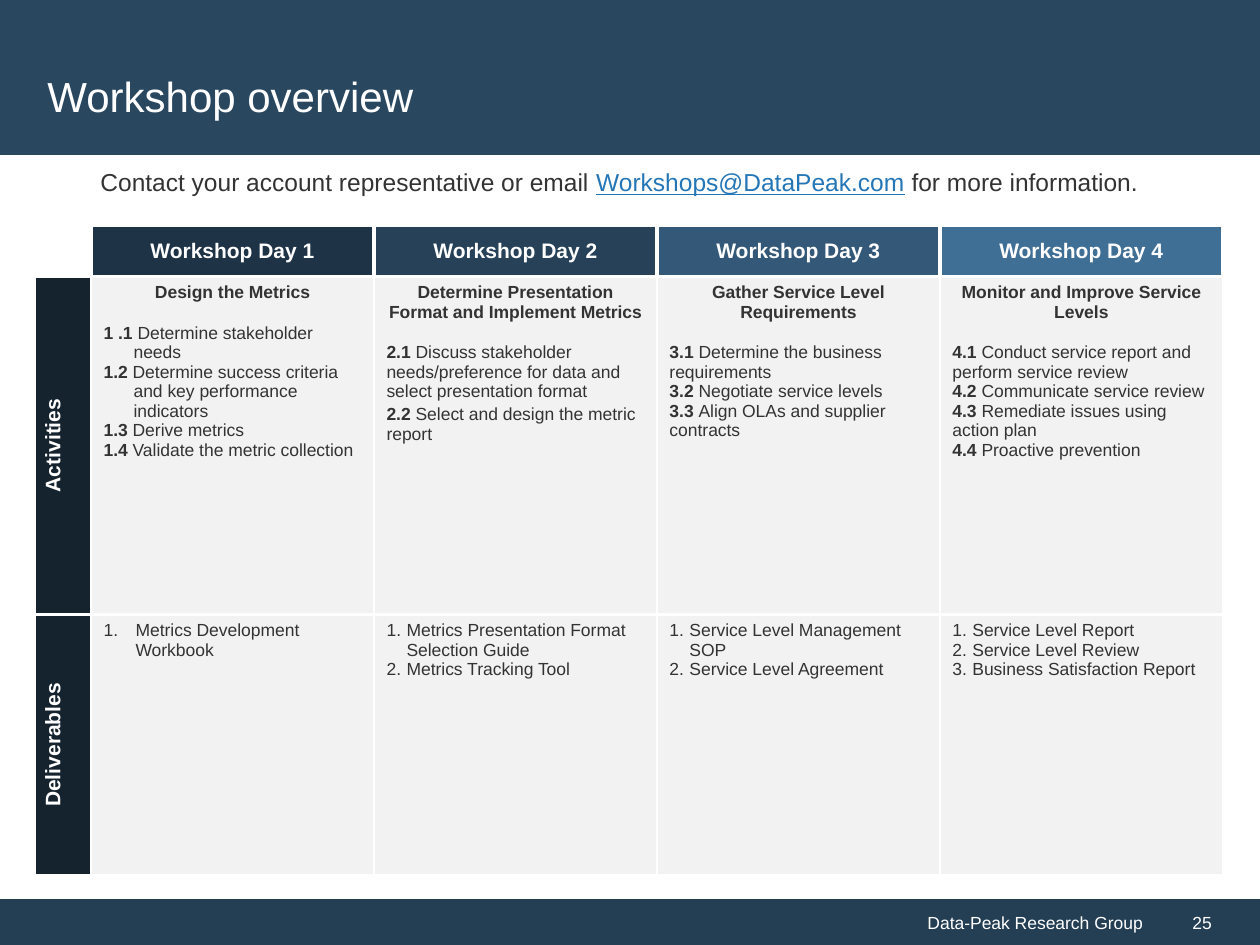
import pptx
import pptx.util
import pptx.dml.color
import pptx.enum.text
import pptx.enum.shapes
import pptx.oxml.ns
import lxml.etree

COLORS = {
    "white": "FFFFFF", "text": "333333", "link": "2576B7", "banner": "29475F",
    "footer": "243F54", "label": "15232F", "panel": "F2F2F2",
    "day1": "1E3346", "day2": "264158", "day3": "345978", "day4": "406F96",
}
EMU_PER_PX = 914400 / 126
PARA = pptx.enum.text.PP_ALIGN
ANCHOR = pptx.enum.text.MSO_ANCHOR
qn = pptx.oxml.ns.qn


def px(value):
    return round(value * EMU_PER_PX)


def write(para, spans, size, color, align=PARA.LEFT, after=0, hang=0, left=0):
    para.alignment = align
    para.space_after = pptx.util.Pt(after)
    properties = para._p.get_or_add_pPr()
    properties.set("marL", str(px(left or hang)))
    properties.set("indent", str(px(-hang)))
    for text, bold in spans:
        span = para.add_run()
        span.text = text
        span.font.name = "Arial"
        span.font.size = pptx.util.Pt(size)
        span.font.bold = bold
        span.font.color.rgb = pptx.dml.color.RGBColor.from_string(COLORS[color])


deck = pptx.Presentation()
deck.slide_width = px(1260)
deck.slide_height = px(945)
page = deck.slides.add_slide(deck.slide_layouts[6])

bars = [
    (0, 899, 1155, 46, "footer", "Data-Peak Research Group", PARA.RIGHT, 0),
    (1155, 899, 105, 46, "footer", "25", PARA.LEFT, 25),
    (0, 0, 1260, 155, "banner", "", PARA.LEFT, 0),
]
for left, top, width, height, color, text, align, indent in bars:
    bar = page.shapes.add_shape(pptx.enum.shapes.MSO_SHAPE.RECTANGLE,
                                px(left), px(top), px(width), px(height))
    bar.shadow.inherit = False
    bar.fill.solid()
    bar.fill.fore_color.rgb = pptx.dml.color.RGBColor.from_string(COLORS[color])
    bar.line.fill.background()
    if text:
        bar.text_frame.vertical_anchor = ANCHOR.MIDDLE
        write(bar.text_frame.paragraphs[0], [(text, False)], 10, "white", align, left=indent)

text_boxes = [
    (35, 35, 1188, 121, 24, [("Workshop overview", "white")]),
    (88, 158, 1130, 48, 14, [
        ("Contact your account representative or email ", "text"),
        ("Workshops@DataPeak.com", "link"),
        (" for more information.", "text"),
    ]),
]
for left, top, width, height, size, spans in text_boxes:
    box = page.shapes.add_textbox(px(left), px(top), px(width), px(height))
    box.text_frame.word_wrap = True
    box.text_frame.vertical_anchor = ANCHOR.MIDDLE
    para = box.text_frame.paragraphs[0]
    for text, color in spans:
        write(para, [(text, False)], size, color)
        para.runs[-1].font.underline = color == "link"

days = [
    ("Design the Metrics", 30, 0, [
        ("1 .1 ", "Determine stakeholder needs"),
        ("1.2 ", "Determine success criteria and key performance indicators"),
        ("1.3 ", "Derive metrics"),
        ("1.4 ", "Validate the metric collection"),
    ], 32, ["Metrics Development Workbook"]),
    ("Determine Presentation Format and Implement Metrics", 0, 2, [
        ("2.1 ", "Discuss stakeholder needs/preference for data and select presentation format"),
        ("2.2 ", "Select and design the metric report"),
    ], 20, ["Metrics Presentation Format Selection Guide", "Metrics Tracking Tool"]),
    ("Gather Service Level Requirements", 0, 0, [
        ("3.1 ", "Determine the business requirements"),
        ("3.2 ", "Negotiate service levels"),
        ("3.3 ", "Align OLAs and supplier contracts"),
    ], 20, ["Service Level Management SOP", "Service Level Agreement"]),
    ("Monitor and Improve Service Levels", 0, 0, [
        ("4.1 ", "Conduct service report and perform service review"),
        ("4.2 ", "Communicate service review"),
        ("4.3 ", "Remediate issues using action plan"),
        ("4.4 ", "Proactive prevention"),
    ], 20, ["Service Level Report", "Service Level Review", "Business Satisfaction Report"]),
]

table = page.shapes.add_table(3, 5, px(35), px(226), px(1188), px(639)).table
for column, width in zip(table.columns, [56] + [283] * 4):
    column.width = px(width)
for row, height in zip(table.rows, [40, 338, 261]):
    row.height = px(height)

for row in range(3):
    for column in range(5):
        cell = table.cell(row, column)
        properties = cell._tc.get_or_add_tcPr()
        for side in ("lnL", "lnR", "lnT", "lnB"):
            points = 2.25 if row == 0 and side in ("lnL", "lnR") else 1.5
            edge = lxml.etree.SubElement(properties, qn("a:" + side), w=str(pptx.util.Pt(points)))
            paint = lxml.etree.SubElement(edge, qn("a:solidFill"))
            lxml.etree.SubElement(paint, qn("a:srgbClr"), val=COLORS["white"])
        if row == 0 and column == 0:
            cell.fill.background()
            continue
        color = f"day{column}" if row == 0 else "label" if column == 0 else "panel"
        cell.fill.solid()
        cell.fill.fore_color.rgb = pptx.dml.color.RGBColor.from_string(COLORS[color])

for row, label in enumerate(["Activities", "Deliverables"], 1):
    cell = table.cell(row, 0)
    cell.vertical_anchor = ANCHOR.MIDDLE
    cell._tc.get_or_add_tcPr().set("vert", "vert270")
    write(cell.text_frame.paragraphs[0], [(label, True)], 12, "white", PARA.CENTER, 5, 30)

for number, (topic, hang, after, activities, list_hang, deliverables) in enumerate(days, 1):
    header = table.cell(0, number)
    header.vertical_anchor = ANCHOR.MIDDLE
    write(header.text_frame.paragraphs[0], [(f"Workshop Day {number}", True)],
          12, "white", PARA.CENTER)

    frame = table.cell(1, number).text_frame
    write(frame.paragraphs[0], [(topic, True)], 10, "text", PARA.CENTER, 12)
    for code, activity in activities:
        write(frame.add_paragraph(), [(code, True), (activity, False)],
              10, "text", after=after, hang=hang)

    frame = table.cell(2, number).text_frame
    for index, deliverable in enumerate(deliverables):
        para = frame.add_paragraph() if index else frame.paragraphs[0]
        write(para, [(deliverable, False)], 10, "text", hang=list_hang)
        lxml.etree.SubElement(para._p.get_or_add_pPr(), qn("a:buAutoNum"), type="arabicPeriod")

deck.save("out.pptx")
